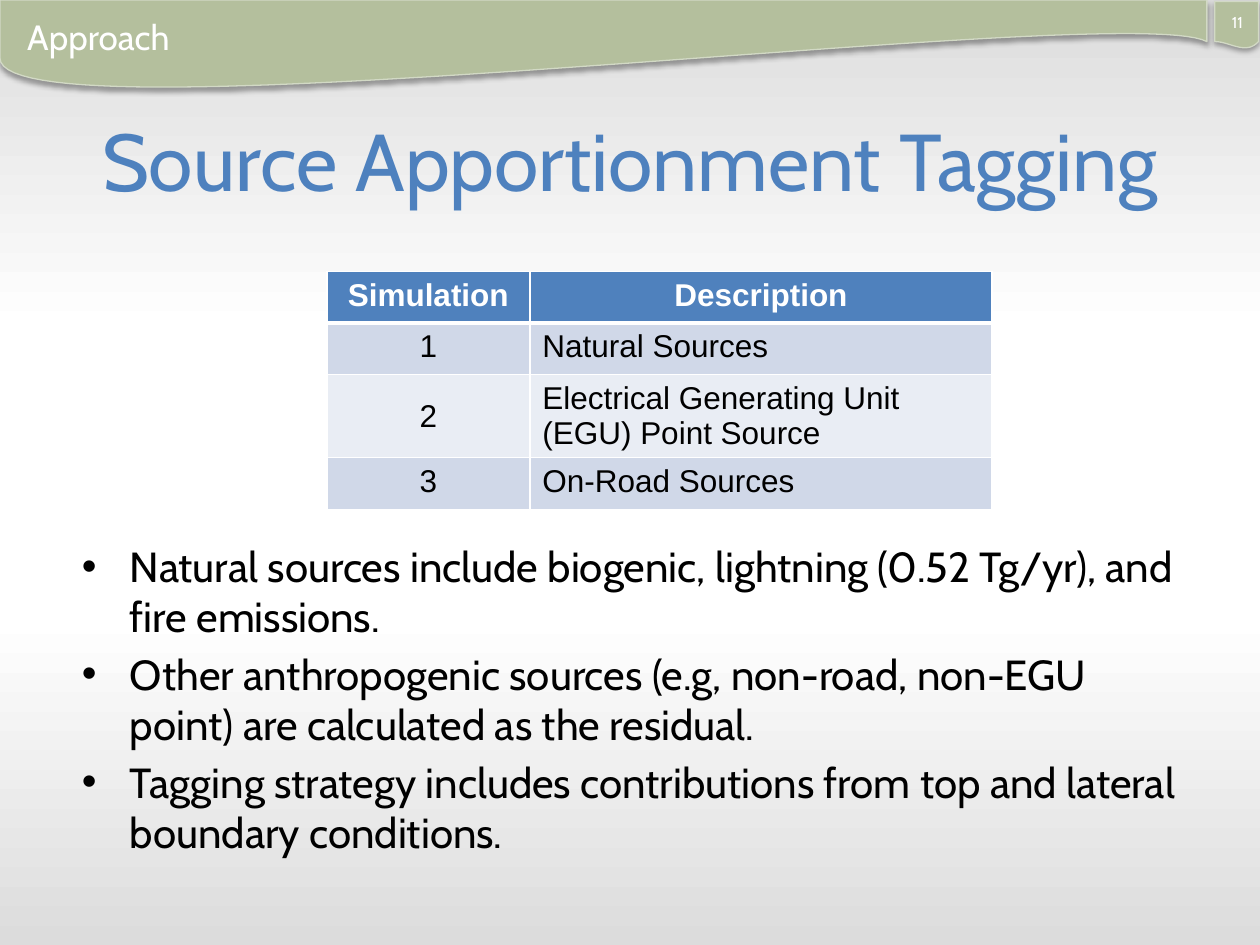
import copy

import pptx
import pptx.dml.color
import pptx.enum.text
import pptx.oxml
import pptx.oxml.ns
import pptx.util

Cm, Pt = pptx.util.Cm, pptx.util.Pt
Align = pptx.enum.text.PP_ALIGN
Anchor = pptx.enum.text.MSO_ANCHOR
rgb = pptx.dml.color.RGBColor.from_string
qn = pptx.oxml.ns.qn
NS = pptx.oxml.ns.nsdecls("a")


class Theme:
    font, grid = "Cabin", "Arial"
    white, black, grey = "FFFFFF", "000000", "DCDCDC"
    title, head, odd, even = "4E81BE", "4F81BD", "D0D8E8", "E9EDF4"
    green, rim = "B4BF9D", "D2D9C5"
    big, body, label, cell, small = 46, 24, 20, 18, 9


def write(frame, *lines, size, color, font=Theme.font, bold=False,
          align=Align.LEFT, anchor=Anchor.TOP, line=None, before=0, bullet=None):
    frame.word_wrap = True
    frame.vertical_anchor = anchor
    for i, text in enumerate(lines):
        para = frame.add_paragraph() if i else frame.paragraphs[0]
        para.alignment = align
        para.space_before = Pt(before)
        if line:
            para.line_spacing = Pt(line)
        run = para.add_run()
        run.text = text
        run.font.name, run.font.size, run.font.bold = font, Pt(size), bold
        run.font.color.rgb = rgb(color)
        if bullet:
            props = para._p.get_or_add_pPr()
            props.set("marL", str(Cm(0.97)))
            props.set("indent", str(Cm(-0.97)))
            props.append(pptx.oxml.parse_xml(f'<a:buFont {NS} typeface="Arial"/>'))
            props.append(pptx.oxml.parse_xml(f'<a:buChar {NS} char="{bullet}"/>'))


def bezier(a, b, c, d, steps=60):
    """Return the points of a cubic curve after its start, in EMU."""
    points = []
    for i in range(1, steps + 1):
        t = i / steps
        u = 1 - t
        points.append(tuple(Cm(u**3 * p + 3 * u * u * t * q + 3 * u * t * t * r + t**3 * s)
                            for p, q, r, s in zip(a, b, c, d)))
    return points


deck = pptx.Presentation()
deck.slide_width, deck.slide_height = Cm(25.4), Cm(19.05)
slide = deck.slides.add_slide(deck.slide_layouts[5])
shapes = slide.shapes

# Background
back = slide.background.fill
back.gradient()
back.gradient_angle = 270
stops = next(slide.element.iter(qn("a:gsLst")))
for i in range(2):
    stops.insert(1, copy.deepcopy(stops[0]))
tones = (0, Theme.grey), (0.35, Theme.white), (0.65, Theme.white), (1, Theme.grey)
for stop, (place, tone) in zip(back.gradient_stops, tones):
    stop.position = place
    stop.color.rgb = rgb(tone)

# Header banner and page tab: left, top, right, then the curved lower edge
banners = (
    (0, 0, 24.33, [(24.33, 0.84), (22.71, -0.03), (0, 2.97), (0, 1.17)]),
    (24.49, 0.03, 25.37, [(25.37, 0.84), (25.12, 1.12), (24.79, 0.84), (24.49, 0.84)]),
)
for left, top, right, edge in banners:
    path = shapes.build_freeform(Cm(left), Cm(top))
    path.add_line_segments([(Cm(right), Cm(top)), (Cm(right), Cm(edge[0][1]))]
                           + bezier(*edge), close=True)
    banner = path.convert_to_shape()
    banner.fill.solid()
    banner.fill.fore_color.rgb = rgb(Theme.green)
    banner.line.color.rgb = rgb(Theme.rim)
    banner.line.width = Pt(0.75)
    banner.shadow.inherit = False
    banner._element.spPr.find(qn("a:effectLst")).append(pptx.oxml.parse_xml(
        f'<a:outerShdw {NS} blurRad="{Pt(3.1)}" dist="{Pt(1.8)}" dir="5400000">'
        f'<a:srgbClr val="{Theme.black}"><a:alpha val="35000"/></a:srgbClr></a:outerShdw>'))

# Title
title = shapes.title
title.left, title.top, title.width, title.height = Cm(0), Cm(2.49), Cm(25.4), Cm(1.78)
write(title.text_frame, "Source Apportionment Tagging", size=Theme.big, color=Theme.title,
      align=Align.CENTER, anchor=Anchor.MIDDLE, line=Theme.big)

# Simulation table
rows = (
    ("Simulation", "Description"),
    ("1", "Natural Sources"),
    ("2", "Electrical Generating Unit (EGU) Point Source"),
    ("3", "On-Road Sources"),
)
table = shapes.add_table(4, 2, Cm(6.59), Cm(5.47), Cm(13.41), Cm(4.78)).table
for col, width in zip(table.columns, (4.09, 9.32)):
    col.width = Cm(width)
for r, row in enumerate(rows):
    table.rows[r].height = Cm(1.67 if r == 2 else 1.04)
    for c, text in enumerate(row):
        cell = table.cell(r, c)
        props = cell._tc.get_or_add_tcPr()
        for side in "LRTB":
            heavy = (r == 0 and side == "B") or (r == 1 and side == "T")
            props.append(pptx.oxml.parse_xml(
                f'<a:ln{side} {NS} w="{Pt(3 if heavy else 1)}"><a:solidFill>'
                f'<a:srgbClr val="{Theme.white}"/></a:solidFill></a:ln{side}>'))
        cell.fill.solid()
        cell.fill.fore_color.rgb = rgb(
            Theme.head if r == 0 else Theme.odd if r % 2 else Theme.even)
        write(cell.text_frame, text, size=Theme.cell, font=Theme.grid, bold=r == 0,
              color=Theme.black if r else Theme.white,
              align=Align.LEFT if r and c else Align.CENTER)
        cell.vertical_anchor = Anchor.MIDDLE if (r, c) == (2, 0) else Anchor.TOP

# Section name, page number and notes on the method
label = shapes.add_textbox(Cm(0.3), Cm(0.18), Cm(11.81), Cm(1.12))
write(label.text_frame, "Approach", size=Theme.label, color=Theme.white)

page = shapes.add_textbox(Cm(24.49), Cm(0.13), Cm(0.91), Cm(0.84))
write(page.text_frame, "11", size=Theme.small, color=Theme.white, align=Align.CENTER)

body = shapes.add_textbox(Cm(1.4), Cm(10.77), Cm(22.66), Cm(8.05))
write(body.text_frame,
      "Natural sources include biogenic, lightning (0.52 Tg/yr), and fire emissions.",
      "Other anthropogenic sources (e.g, non-road, non-EGU point) are calculated "
      "as the residual.",
      "Tagging strategy includes contributions from top and lateral boundary conditions.",
      size=Theme.body, color=Theme.black, before=4, bullet="•")

deck.save("out.pptx")
